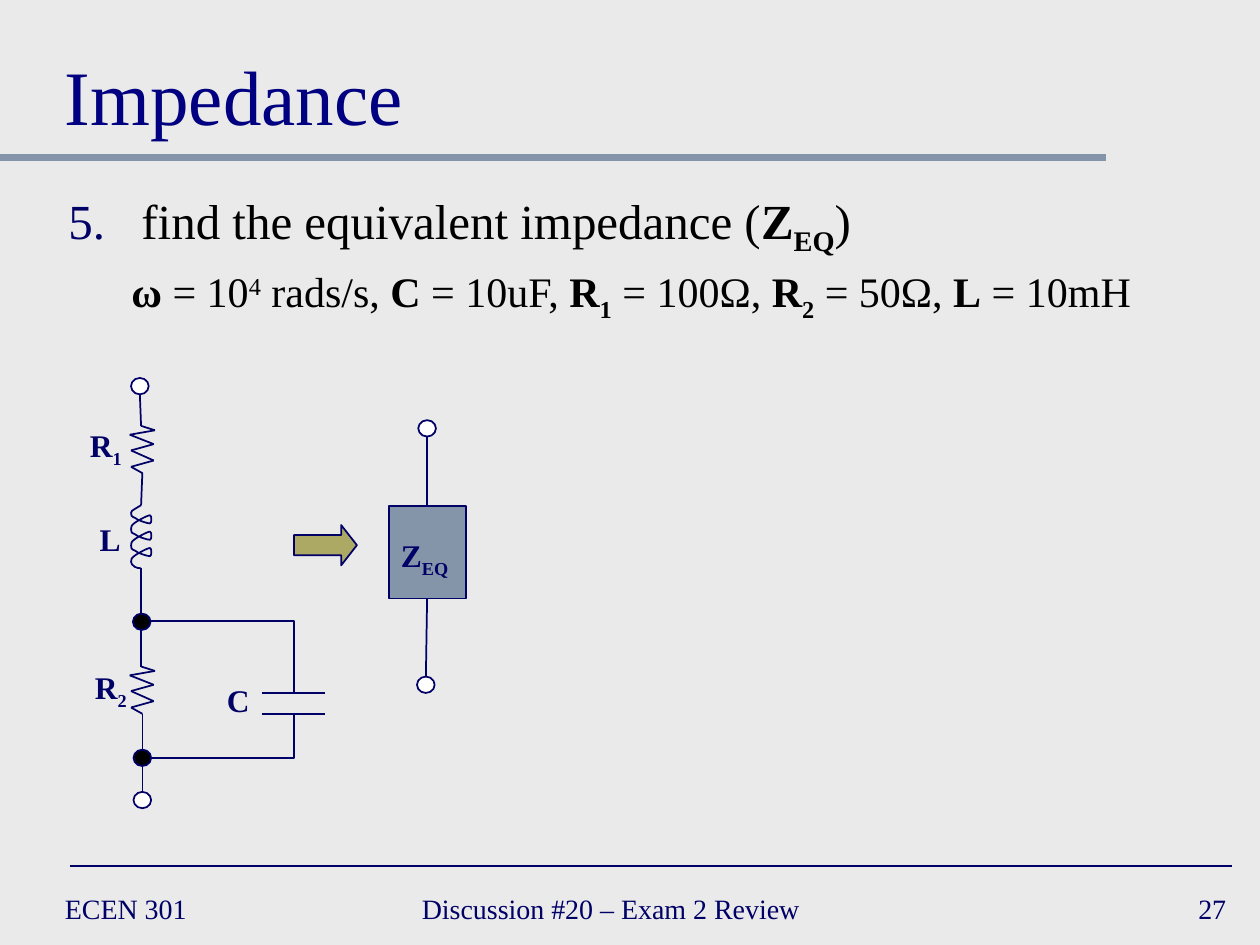
"""Build the impedance review page with its two circuit drawings."""
from itertools import pairwise

from lxml import etree
from pptx import Presentation
from pptx.dml.color import RGBColor
from pptx.enum.shapes import MSO_CONNECTOR, MSO_SHAPE
from pptx.enum.text import MSO_ANCHOR, PP_ALIGN
from pptx.oxml.ns import qn
from pptx.util import Inches, Pt

STRAIGHT, ELBOW = MSO_CONNECTOR.STRAIGHT, MSO_CONNECTOR.ELBOW
OVAL, RECT, ARROW = MSO_SHAPE.OVAL, MSO_SHAPE.RECTANGLE, MSO_SHAPE.RIGHT_ARROW
TOP, MIDDLE, BOTTOM = MSO_ANCHOR.TOP, MSO_ANCHOR.MIDDLE, MSO_ANCHOR.BOTTOM
LEFT, CENTER, RIGHT = PP_ALIGN.LEFT, PP_ALIGN.CENTER, PP_ALIGN.RIGHT

COLORS = {"page": "EAEAEA", "ink": "000066", "title": "000080", "text": "000000",
          "steel": "8495A9", "olive": "ACA964", "open": "FFFFFF", "joint": "000000"}
FONT = "Times New Roman"
COLUMNS, ROWS = 100, 75
NODE_WIDTH, NODE_HEIGHT = 1.4, 1.3
BOLD = {"bold": True}
SUB = {"bold": True, "baseline": -25}
SUPER = {"baseline": 30}

QUESTION = [("find the equivalent impedance (", {}), ("Z", BOLD), ("EQ", SUB), (")", {})]
VALUES = [("ω", BOLD), (" = 10", {}), ("4", SUPER), (" rads/s, ", {}),
          ("C", BOLD), (" = 10uF, ", {}), ("R", BOLD), ("1", SUB), (" = 100Ω, ", {}),
          ("R", BOLD), ("2", SUB), (" = 50Ω, ", {}), ("L", BOLD), (" = 10mH", {})]
ZIGZAG = [(0.9, 0), (2, 0.35), (0, 0.7), (1.9, 1.45), (0.1, 1.95),
          (1.9, 2.75), (0.1, 3.25), (1, 3.75)]
COIL_START = [((0.7, 0.1), (0.4, 0.2), (0.3, 0.3)), ((0.1, 0.4), (0, 0.5), (0, 0.6))]
COIL_TURN = [((0, 0.2), (0, 0.3), (0.3, 0.4)), ((0.5, 0.6), (1.3, 0.85), (1.5, 0.85)),
             ((1.65, 0.85), (1.65, 0.2), (1.5, 0.2)), ((1.3, 0.2), (0.5, 0.65), (0.3, 0.8)),
             ((0, 1), (0, 1.15), (0, 1.3))]
COIL_END = [((0, 0.1), (0.1, 0.3), (0.3, 0.4)), ((0.4, 0.5), (0.7, 0.5), (0.8, 0.5))]


def add_span(para, text, *, size, color, bold=False, baseline=0):
    """Add formatted text to a paragraph."""
    span = para.add_run()
    span.text = text
    span.font.name, span.font.size, span.font.bold = FONT, Pt(size), bold
    span.font.color.rgb = RGBColor.from_string(COLORS[color])
    if baseline:
        span._r.get_or_add_rPr().set("baseline", str(baseline * 1000))


def shift(curves, down):
    """Move Bezier curves down by a number of rows."""
    return [[(x, y + down) for x, y in curve] for curve in curves]


class Sketch:
    """Hold the grid, the line style and the current page."""

    def __init__(self, deck):
        self.cell_width = deck.slide_width / COLUMNS
        self.cell_height = deck.slide_height / ROWS
        self.page = deck.slides.add_slide(deck.slide_layouts[6])
        self.shapes = self.page.shapes
        fill = self.page.background.fill
        fill.solid()
        fill.fore_color.rgb = RGBColor.from_string(COLORS["page"])

    def place(self, *lengths):
        """Turn alternating columns and rows into slide lengths."""
        cells = (self.cell_width, self.cell_height)
        return [round(length * cells[i % 2]) for i, length in enumerate(lengths)]

    def stroke(self, item, color="ink", weight=1):
        """Give an item its line."""
        item.line.color.rgb = RGBColor.from_string(COLORS[color])
        item.line.width = Pt(weight)

    def line(self, start, end, kind=STRAIGHT, **style):
        """Draw a connector without a shadow."""
        wire = self.shapes.add_connector(kind, *self.place(*start, *end))
        self.stroke(wire, **style)
        properties = wire._element.spPr
        etree.SubElement(properties, qn("a:effectLst"))
        if kind == ELBOW:
            properties.find(qn("a:prstGeom")).set("prst", "bentConnector2")

    def shape(self, kind, color, *frame):
        """Draw a filled preset shape."""
        item = self.shapes.add_shape(kind, *self.place(*frame))
        item.shadow.inherit = False
        item.fill.solid()
        item.fill.fore_color.rgb = RGBColor.from_string(COLORS[color])
        self.stroke(item)
        return item

    def node(self, x, y, color="open"):
        """Draw a terminal or a joint from its top left corner."""
        self.shape(OVAL, color, x, y, NODE_WIDTH, NODE_HEIGHT)

    def outline(self, points):
        """Draw an open, unfilled freeform through the points."""
        corners = [self.place(*point) for point in points]
        builder = self.shapes.build_freeform(*corners[0])
        builder.add_line_segments(corners[1:], close=False)
        item = builder.convert_to_shape()
        item.shadow.inherit = False
        item.fill.background()
        self.stroke(item)
        return item

    def resistor(self, x, y):
        """Draw a zigzag resistor."""
        for start, end in pairwise([(x + dx, y + dy) for dx, dy in ZIGZAG]):
            self.line(start, end)

    def coil(self, x, y):
        """Draw an inductor with three turns of smooth curves."""
        curves = COIL_START + [curve for turn in range(3)
                               for curve in shift(COIL_TURN, 0.6 + 1.3 * turn)]
        curves += shift(COIL_END, 4.5)
        ends = [(0.8, 0)] + [curve[-1] for curve in curves]
        item = self.outline([(x + dx, y + dy) for dx, dy in ends])
        segments = list(item._element.iter(qn("a:lnTo")))
        for segment, curve in zip(segments, curves):
            bend = etree.Element(qn("a:cubicBezTo"))
            for point in curve:
                across, down = self.place(*point)
                etree.SubElement(bend, qn("a:pt"), x=str(across), y=str(down))
            segment.getparent().replace(segment, bend)

    def text(self, spans, *frame, size=16, color="ink", anchor=MIDDLE, align=LEFT, wrap=True):
        """Add a text box with one paragraph."""
        box = self.shapes.add_textbox(*self.place(*frame))
        box.text_frame.word_wrap = wrap
        box.text_frame.vertical_anchor = anchor
        para = box.text_frame.paragraphs[0]
        para.alignment = align
        for text, style in spans:
            add_span(para, text, size=size, color=color, **style)
        return box

    def label(self, name, index, *frame):
        """Name a circuit part, with an optional subscript."""
        spans = [(name, BOLD)] + ([(index, SUB)] if index else [])
        self.text(spans, *frame, 4, size=18, anchor=TOP, align=CENTER, wrap=False)

    def question(self):
        """Write the numbered question and its given values."""
        box = self.text(QUESTION, 4.45, 14.6, 91.4, 12.9, size=28, color="text", anchor=TOP)
        layout = box.text_frame.paragraphs[0]._p.get_or_add_pPr()
        layout.set("marL", str(Inches(0.58)))
        layout.set("indent", str(-Inches(0.58)))
        tint = etree.SubElement(layout, qn("a:buClr"))
        etree.SubElement(tint, qn("a:srgbClr"), val=COLORS["ink"])
        etree.SubElement(layout, qn("a:buFont"), typeface=FONT)
        etree.SubElement(layout, qn("a:buAutoNum"), type="arabicPeriod", startAt="5")
        para = box.text_frame.add_paragraph()
        para.level = 1
        para.space_before = Pt(5)
        layout = para._p.get_or_add_pPr()
        layout.set("marL", str(Inches(1)))
        layout.set("indent", str(-Inches(0.5)))
        etree.SubElement(layout, qn("a:buNone"))
        for text, style in VALUES:
            add_span(para, text, size=24, color="text", **style)


def main():
    """Compose the page and save it."""
    deck = Presentation()
    deck.slide_width, deck.slide_height = Inches(10), Inches(7.5)
    sketch = Sketch(deck)

    sketch.line((0, 12.5), (87.8, 12.5), color="steel", weight=4)
    sketch.line((5.56, 68.75), (97.8, 68.75))
    for words, x, width, align in [("ECEN 301", 4.17, 21.7, LEFT),
                                   ("Discussion #20 – Exam 2 Review", 32.5, 38.3, LEFT),
                                   ("27", 77.5, 20.8, RIGHT)]:
        sketch.text([(words, {})], x, 70, width, 4.2, align=align)
    sketch.text([("Impedance", {})], 4.17, 1.67, 91.7, 10, size=44, color="title", anchor=BOTTOM)
    sketch.question()

    sketch.shape(ARROW, "olive", 23.33, 41.67, 5, 3.2).adjustments[1] = 0.39
    sketch.shape(RECT, "steel", 30.9, 40.15, 6.1, 7.35)
    for start, end in [((33.8, 53.7), (33.9, 47.5)), ((33.9, 34.7), (33.9, 40.1)),
                       ((11.1, 31.3), (11.2, 33.8)), ((11.3, 37.5), (11.2, 40.1)),
                       ((11.2, 45.1), (11.2, 48.7)), ((11.2, 50), (11.2, 52.9)),
                       ((11.3, 56.7), (11.3, 59.5)), ((11.3, 60.8), (11.3, 62.8))]:
        sketch.line(start, end)
    for y in (55, 56.67):
        sketch.outline([(20.83, y), (23.33, y), (25.83, y)])
    sketch.line((11.9, 49.3), (23.33, 55), ELBOW)
    sketch.line((12, 60.15), (23.33, 56.67), ELBOW)
    for top in (33.8, 52.9):
        sketch.resistor(10.3, top)
    sketch.coil(10.4, 40.1)
    for x, y in [(33.1, 53.7), (33.2, 33.35), (10.4, 30), (10.6, 62.85)]:
        sketch.node(x, y)
    for x, y in [(10.55, 48.7), (10.6, 59.5)]:
        sketch.node(x, y, "joint")
    for name, index, x, y, width in [("Z", "EQ", 30.65, 42.05, 6.1), ("R", "1", 6.05, 33.3, 4.7),
                                     ("L", "", 6.9, 40.8, 3.7), ("R", "2", 6.45, 52.55, 4.7),
                                     ("C", "", 17, 53.6, 3.8)]:
        sketch.label(name, index, x, y, width)
    deck.save("out.pptx")


if __name__ == "__main__":
    main()
